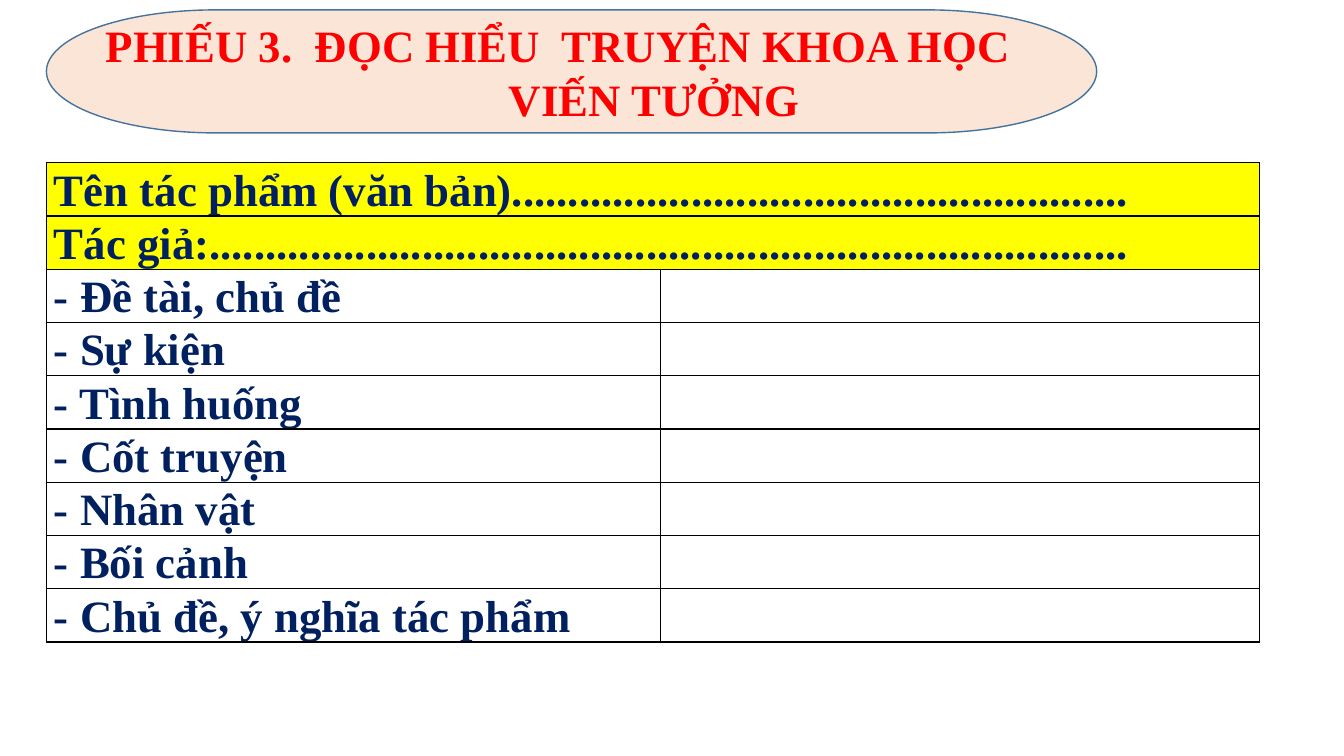
from pptx import Presentation
from pptx.dml.color import RGBColor
from pptx.enum.shapes import MSO_SHAPE
from pptx.enum.text import MSO_ANCHOR, PP_ALIGN
from pptx.util import Cm, Pt
from lxml.etree import SubElement
from pptx.oxml.ns import qn

COLORS = {
    "peach": "FBE5D6",
    "blue": "43739E",
    "red": "FF0000",
    "navy": "002060",
    "yellow": "FFFF00",
    "white": "FFFFFF",
    "black": "000000",
}
HEADS = [
    "Tên tác phẩm (văn bản)" + "." * 55,
    "Tác giả:" + "." * 82,
]
ITEMS = [
    "- Đề tài, chủ đề",
    "- Sự kiện",
    "- Tình huống",
    "- Cốt truyện",
    "- Nhân vật",
    "- Bối cảnh",
    "- Chủ đề, ý nghĩa tác phẩm",
]


def style(para, color):
    font = para.font
    font.name = "Times New Roman"
    font.size = Pt(32)
    font.bold = True
    font.color.rgb = RGBColor.from_string(COLORS[color])


def border(cell):
    props = cell._tc.get_or_add_tcPr()
    for side in ("a:lnL", "a:lnR", "a:lnT", "a:lnB"):
        line = SubElement(props, qn(side), w=str(Pt(1)))
        fill = SubElement(line, qn("a:solidFill"))
        SubElement(fill, qn("a:srgbClr"), val=COLORS["black"])


deck = Presentation()
deck.slide_width = Cm(33.87)
deck.slide_height = Cm(19.05)
slide = deck.slides.add_slide(deck.slide_layouts[6])

title = slide.shapes.add_shape(
    MSO_SHAPE.FLOWCHART_TERMINATOR, Cm(1.17), Cm(0.25), Cm(26.47), Cm(3.1))
title.shadow.inherit = False
title.fill.solid()
title.fill.fore_color.rgb = RGBColor.from_string(COLORS["peach"])
title.line.color.rgb = RGBColor.from_string(COLORS["blue"])
title.line.width = Pt(1)
frame = title.text_frame
frame.word_wrap = True
frame.vertical_anchor = MSO_ANCHOR.MIDDLE
frame.text = "PHIẾU 3.  ĐỌC HIỂU  TRUYỆN KHOA HỌC\nVIẾN TƯỞNG"
for para in frame.paragraphs:
    para.alignment = PP_ALIGN.LEFT
    style(para, "red")
frame.paragraphs[1]._p.get_or_add_pPr().set("marL", str(Cm(10.16)))

labels = HEADS + ITEMS
high = Cm(1.34)
table = slide.shapes.add_table(
    len(labels), 2, Cm(1.17), Cm(4.1), Cm(30.58), high * len(labels)).table
table.first_row = False
table.horz_banding = False
table.columns[0].width = Cm(15.47)
table.columns[1].width = Cm(15.11)

for row, label in enumerate(labels):
    head = row < len(HEADS)
    for cell in table.rows[row].cells:
        border(cell)
        cell.fill.solid()
        cell.fill.fore_color.rgb = RGBColor.from_string(
            COLORS["yellow" if head else "white"])
        cell.margin_left = cell.margin_right = Cm(0.19)
        cell.margin_top = cell.margin_bottom = 0
    first = table.cell(row, 0)
    if head:
        first.merge(table.cell(row, 1))
    first.text = label
    para = first.text_frame.paragraphs[0]
    para.alignment = PP_ALIGN.JUSTIFY if row else PP_ALIGN.LEFT
    para.line_spacing = 1.07
    para.space_after = Pt(8)
    style(para, "navy")

deck.save("out.pptx")
